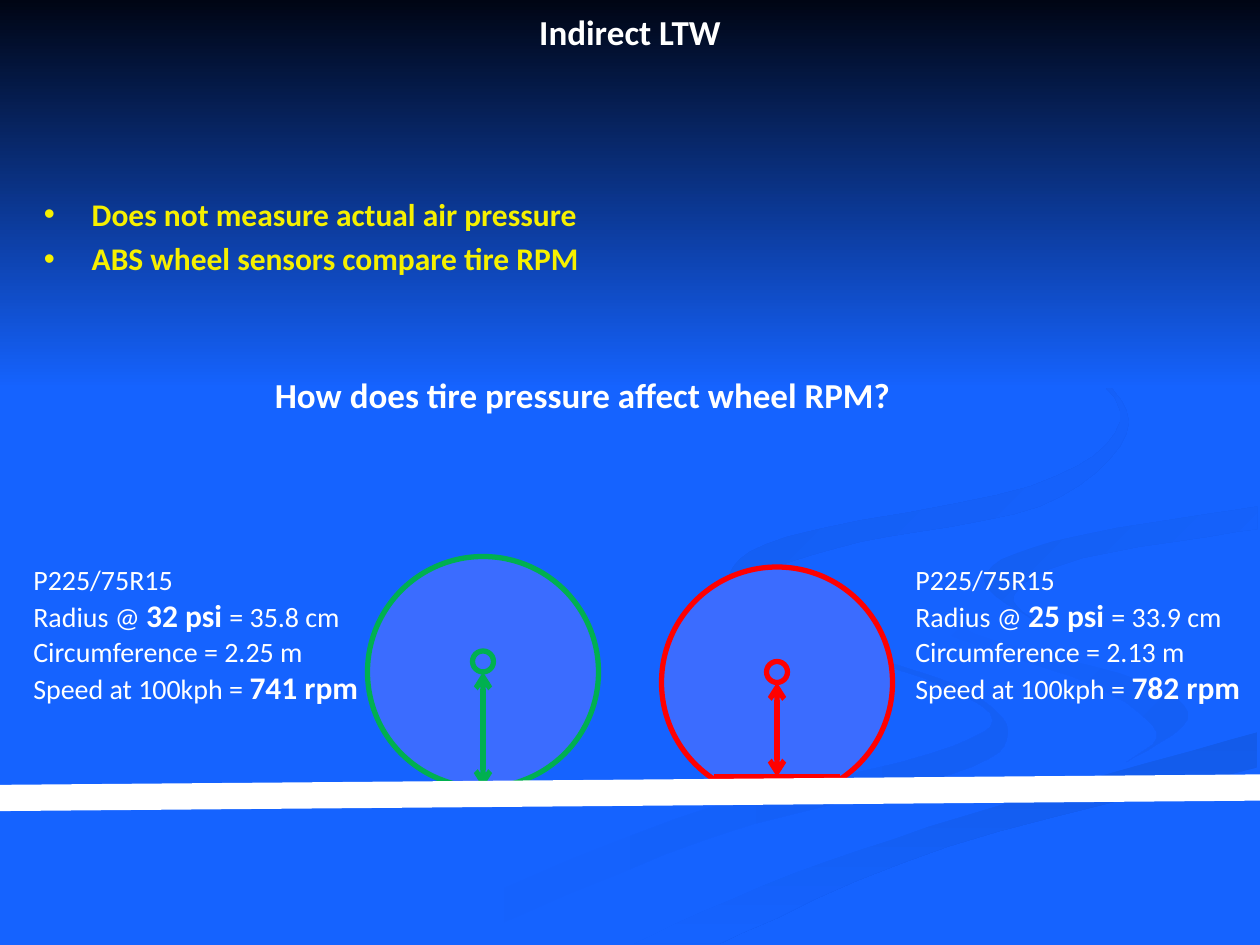
from lxml import etree
from pptx import Presentation
from pptx import util as u
from pptx.dml.color import RGBColor
from pptx.enum import shapes, text
from pptx.oxml import ns

# Layout grid: 120 columns by 90 rows
COLUMNS, ROWS = 120, 90
WIDTH, HEIGHT = u.Inches(10), u.Inches(7.5)
COL, ROW = WIDTH / COLUMNS, HEIGHT / ROWS
FONT = "Calibri"

BLUE = RGBColor(0x15, 0x63, 0xFF)
NIGHT = RGBColor(0x00, 0x05, 0x14)
SHADE = RGBColor(0x14, 0x5F, 0xF5)
DARK_SHADE = RGBColor(0x13, 0x5B, 0xEA)
EDGE_SHADE = RGBColor(0x14, 0x5E, 0xF1)
TOP_SHADE = RGBColor(0x14, 0x5C, 0xED)
TIRE = RGBColor(0x3B, 0x6C, 0xFF)
GREEN = RGBColor(0x00, 0xB0, 0x50)
RED = RGBColor(0xFF, 0x00, 0x00)
YELLOW = RGBColor(0xF6, 0xF0, 0x00)
WHITE = RGBColor(0xFF, 0xFF, 0xFF)

# Ribbon edges shared by neighbours, in thousandths of the slide width
BEND = [(724, 464), (774, 503), (905, 540), (943, 570), (894, 605)]
CREST = [(503, 749), (630, 693), (797, 638), (998, 581)]
CURL = [(826, 496), (781, 460), (835, 430), (998, 402)]

# Each ribbon: start colour, end colour, angle, and the smooth edges around it
RIBBONS = [
    (BLUE, SHADE, 0, [
        [(575, 459), (583, 477), (642, 507), (757, 543), (800, 581), (756, 614),
         (564, 665), (361, 749)],
        [(300, 749), (539, 649), (739, 598), (786, 566), (697, 525), (593, 491), (570, 468)]]),
    (BLUE, SHADE, 45, [BEND, [(894, 605), (918, 581), (868, 544), (746, 500), (724, 464)]]),
    (DARK_SHADE, BLUE, 90, [CREST, [(998, 609), (752, 672), (571, 749)]]),
    (BLUE, None, 0, [BEND + [(619, 684), (477, 749)], CREST, [(998, 538), (826, 496)], CURL,
                     [(998, 387), (808, 417), (724, 464)]]),
    (EDGE_SHADE, BLUE, 45, [CURL, [(998, 420), (859, 443), (805, 472), (826, 496)]]),
    (TOP_SHADE, BLUE, 45, [
        [(762, 233), (864, 291), (894, 344), (825, 402), (683, 430), (597, 461), (622, 500)],
        [(622, 500), (578, 462), (625, 426), (818, 386), (889, 335), (846, 279), (762, 233)]]),
]


def smooth(edge, steps=6):
    """Points of a Catmull-Rom curve through an open edge."""
    padded = [edge[0], *edge, edge[-1]]
    curve = []
    for a, b, c, d in zip(padded, padded[1:], padded[2:], padded[3:]):
        for step in range(steps):
            t = step / steps
            curve.append(tuple(
                q + t / 2 * (r - p + t * (2 * p - 5 * q + 4 * r - s + t * (3 * (q - r) + s - p)))
                for p, q, r, s in zip(a, b, c, d)))
    return curve + [edge[-1]]


def paint(shape, start, end=None, angle=0, line=None):
    """Fill a shape with one colour or a gradient, and set its outline."""
    shape.shadow.inherit = False
    if end is None:
        shape.fill.solid()
        shape.fill.fore_color.rgb = start
    else:
        shape.fill.gradient()
        shape.fill.gradient_angle = -angle % 360
        for stop, colour in zip(shape.fill.gradient_stops, (start, end)):
            stop.color.rgb = colour
    if line is None:
        shape.line.fill.background()
    else:
        shape.line.color.rgb = line
        shape.line.width = u.Pt(3)


def place(left, top, width, height):
    return [round(v) for v in (left * COL, top * ROW, width * COL, height * ROW)]


def add_line(page, start, end, colour, weight=3, arrows=False):
    line = page.shapes.add_connector(shapes.MSO_CONNECTOR.STRAIGHT, *place(*start, *end))
    line.line.color.rgb = colour
    line.line.width = u.Pt(weight)
    if arrows:
        stroke = line.line._get_or_add_ln()
        for tag in ("a:headEnd", "a:tailEnd"):
            etree.SubElement(stroke, ns.qn(tag), type="arrow")
    etree.SubElement(line._element.spPr, ns.qn("a:effectLst"))


def add_circle(page, box, outline):
    circle = page.shapes.add_shape(shapes.MSO_SHAPE.OVAL, *place(*box))
    paint(circle, TIRE, line=outline)


def add_text(page, box, paragraphs, size=16, colour=WHITE, bold=False, bullet=False,
             align=text.PP_ALIGN.LEFT, anchor=text.MSO_ANCHOR.TOP, gap=0):
    """Each paragraph is a list of runs; a run is (words, is_strong). Strong is bold 18 pt."""
    frame = page.shapes.add_textbox(*place(*box)).text_frame
    frame.word_wrap = True
    frame.vertical_anchor = anchor
    for index, runs in enumerate(paragraphs):
        para = frame.add_paragraph() if index else frame.paragraphs[0]
        para.alignment = align
        if index and gap:
            para.space_before = u.Pt(gap)
        if bullet:
            props = para._p.get_or_add_pPr()
            indent = u.Inches(0.38)
            props.set("marL", str(indent))
            props.set("indent", str(-indent))
            etree.SubElement(props, ns.qn("a:buFont"), typeface="Arial")
            etree.SubElement(props, ns.qn("a:buChar"), char="•")
        for words, strong in runs:
            span = para.add_run()
            span.text = words
            span.font.name = FONT
            span.font.size = u.Pt(18 if strong else size)
            span.font.bold = bold or strong
            span.font.color.rgb = colour


def draw_background(page):
    page.background.fill.solid()
    page.background.fill.fore_color.rgb = BLUE
    for start, end, angle, edges in RIBBONS:
        outline = [point for edge in edges for point in smooth(edge)]
        builder = page.shapes.build_freeform(*outline[0], scale=WIDTH / 1000)
        builder.add_line_segments(outline[1:], close=True)
        paint(builder.convert_to_shape(), start, end, angle)
    # Dark sky fading into the page
    sky = page.shapes.add_shape(shapes.MSO_SHAPE.RECTANGLE, *place(0, 0, COLUMNS, 37))
    paint(sky, NIGHT, BLUE, 90)


def draw_wheel(page, left, top, colour, radius_rows, flat=False):
    """A tire 22 units across, its hub and its rolling radius."""
    middle, hub_bottom = left + 11, top + 11
    ground = hub_bottom + radius_rows
    add_circle(page, (left, top, 22, 22), colour)
    if flat:
        add_line(page, (left + 5, ground), (left + 17, ground), colour)
    add_line(page, (middle, hub_bottom), (middle, ground), colour, arrows=True)
    add_circle(page, (middle - 1, hub_bottom - 2, 2, 2), colour)


def draw_facts(page, left, top, pressure, radius, circumference, speed):
    add_text(page, (left, top, 34, 15), [
        [("P225/75R15", False)],
        [("Radius @ ", False), (f"{pressure} psi ", True), (f"= {radius} cm", False)],
        [(f"Circumference = {circumference} m", False)],
        [("Speed at 100kph = ", False), (f"{speed} rpm", True)],
    ])


def build_slide(deck):
    page = deck.slides.add_slide(deck.slide_layouts[6])
    draw_background(page)
    # Title and bullets
    add_text(page, (6, 0, 108, 6), [[("Indirect LTW", False)]], size=20, bold=True,
             align=text.PP_ALIGN.CENTER, anchor=text.MSO_ANCHOR.MIDDLE)
    add_text(page, (3, 18, 102, 23), [[("Does not measure actual air pressure", False)],
                                      [("ABS wheel sensors compare tire RPM", False)]],
             size=18, bold=True, colour=YELLOW, bullet=True, gap=3.6)
    # Wheels on the road
    draw_wheel(page, 35, 53, GREEN, 11)
    draw_wheel(page, 63, 54, RED, 9, flat=True)
    add_line(page, (0, 76), (COLUMNS, 75), WHITE, weight=15)
    draw_facts(page, 2, 53, 32, "35.8", "2.25", 741)
    draw_facts(page, 86, 53, 25, "33.9", "2.13", 782)
    # Question
    add_text(page, (25, 35, 91, 5), [[("How does tire pressure affect wheel RPM?", False)]],
             size=20, bold=True)


def main():
    deck = Presentation()
    deck.slide_width, deck.slide_height = WIDTH, HEIGHT
    build_slide(deck)
    deck.save("out.pptx")


if __name__ == "__main__":
    main()
